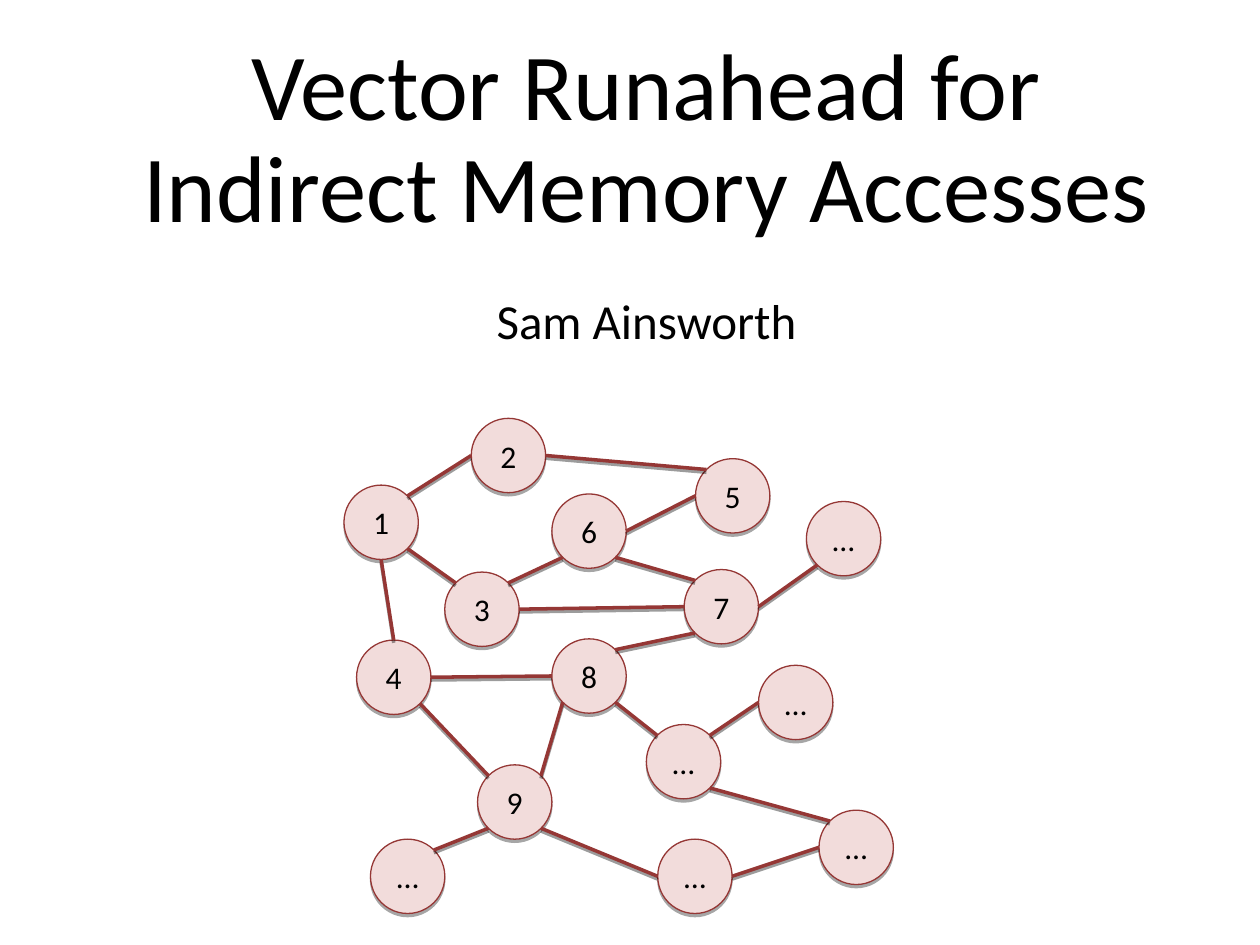
from lxml import etree
from pptx import Presentation, util as u
from pptx.dml.color import RGBColor
from pptx.enum import shapes, text
from pptx.oxml.ns import qn

PX = 9144
DIAM = 59
HUES = {"ink": "000000", "rose": "F2DCDB", "wine": "953735"}

DIAG = 0.5 ** 0.5
SIDES = {
    "N": (0, -1), "NE": (DIAG, -DIAG), "E": (1, 0), "SE": (DIAG, DIAG),
    "S": (0, 1), "SW": (-DIAG, DIAG), "W": (-1, 0), "NW": (-DIAG, -DIAG),
}

NODES = {
    "1": (0, 53), "2": (101, 0), "3": (80, 122), "4": (10, 176),
    "5": (279, 32), "6": (165, 60), "7": (270, 120), "8": (165, 175),
    "9": (106, 275), "a": (240, 243), "b": (249, 334), "c": (21, 334),
    "d": (329, 196), "e": (367, 66), "f": (377, 311),
}

EDGES = [
    ("1", "S", "4", "N"), ("1", "NE", "2", "W"), ("3", "NW", "1", "SE"),
    ("2", "E", "5", "NW"), ("4", "E", "8", "W"), ("4", "SE", "9", "NW"),
    ("9", "NE", "8", "SW"), ("9", "SE", "b", "W"), ("7", "SW", "8", "NE"),
    ("7", "W", "3", "E"), ("3", "NE", "6", "SW"), ("5", "W", "6", "E"),
    ("7", "NW", "6", "SE"), ("8", "SE", "a", "NW"), ("9", "SW", "c", "NE"),
    ("b", "E", "f", "W"), ("a", "NE", "d", "W"), ("7", "E", "e", "SW"),
    ("a", "SE", "f", "NW"),
]


def emu(*vals):
    return [round(v * PX) for v in vals]


def hue(name):
    return RGBColor.from_string(HUES[name])


def write(shape, words, size, anchor, lead=1.0, before=0):
    frame = shape.text_frame
    frame.word_wrap = True
    frame.auto_size = text.MSO_AUTO_SIZE.NONE
    frame.vertical_anchor = anchor
    para = frame.paragraphs[0]
    para.alignment = text.PP_ALIGN.CENTER
    para.line_spacing = lead
    para.space_before = u.Pt(before)
    run = para.add_run()
    run.text = words
    run.font.size = u.Pt(size)
    run.font.name = "Calibri"
    run.font.color.rgb = hue("ink")


def stroke(shape, width):
    shape.line.color.rgb = hue("wine")
    shape.line.width = u.Pt(width)


def shade(props, dist, alpha):
    fx = etree.SubElement(props, qn("a:effectLst"))
    drop = etree.SubElement(fx, qn("a:outerShdw"), blurRad="0", dist=str(u.Pt(dist)),
                            dir="5400000", rotWithShape="0")
    tint = etree.SubElement(drop, qn("a:srgbClr"), val=HUES["ink"])
    etree.SubElement(tint, qn("a:alpha"), val=str(alpha * 1000))


def head(holder, box, words, size, anchor, before=0):
    holder.left, holder.top, holder.width, holder.height = emu(*box)
    write(holder, words, size, anchor, lead=0.9, before=before)


def node(slide, x, y, label):
    disc = slide.shapes.add_shape(shapes.MSO_SHAPE.OVAL, *emu(x, y, DIAM, DIAM))
    disc.fill.solid()
    disc.fill.fore_color.rgb = hue("rose")
    stroke(disc, 0.75)
    shade(disc.element.spPr, 1.8, 35)
    write(disc, label, 18, text.MSO_ANCHOR.MIDDLE)


def edge(slide, start, end):
    link = slide.shapes.add_connector(shapes.MSO_CONNECTOR.STRAIGHT, *emu(*start, *end))
    stroke(link, 2)
    shade(link.element.spPr, 1.6, 38)


def graph(slide, left, top):
    def port(key, side):
        x, y = NODES[key]
        dx, dy = SIDES[side]
        rad = DIAM / 2
        return left + x + rad * (1 + dx), top + y + rad * (1 + dy)

    for key, (x, y) in NODES.items():
        node(slide, left + x, top + y, key if key.isdigit() else "…")
    for src, out, dest, into in EDGES:
        edge(slide, port(src, out), port(dest, into))


def main():
    deck = Presentation()
    deck.slide_width, deck.slide_height = emu(1000, 750)
    slide = deck.slides.add_slide(deck.slide_layouts[0])
    head(slide.shapes.title, (88, 21, 850, 177),
         "Vector Runahead for Indirect Memory Accesses", 54, text.MSO_ANCHOR.BOTTOM)
    head(slide.placeholders[1], (138, 231, 750, 181),
         "Sam Ainsworth", 28, text.MSO_ANCHOR.TOP, before=10)
    graph(slide, 273, 332)
    deck.save("out.pptx")


if __name__ == "__main__":
    main()
